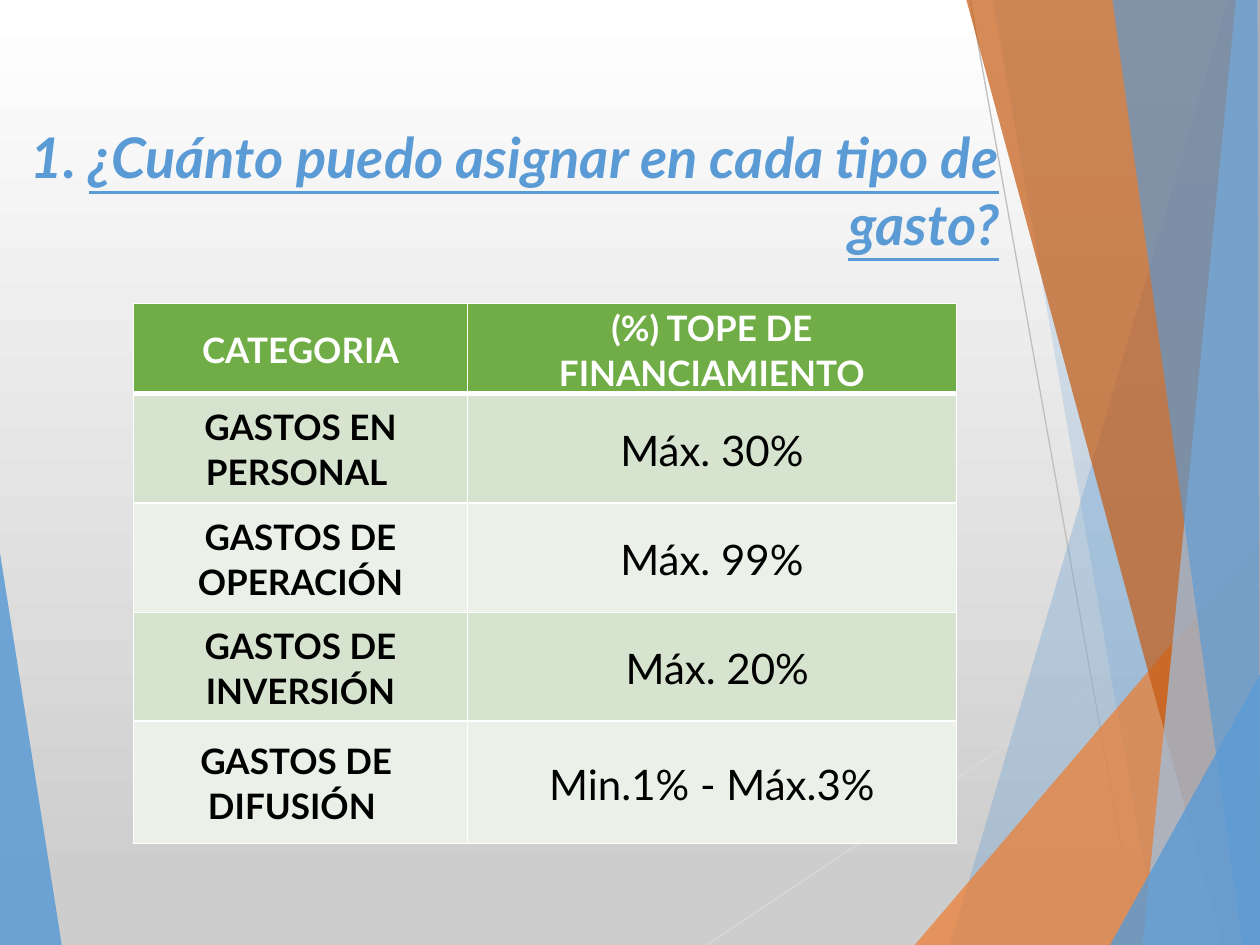
from lxml import etree
from pptx import Presentation
from pptx.dml.color import RGBColor
from pptx.enum.shapes import MSO_CONNECTOR
from pptx.enum.text import MSO_ANCHOR, PP_ALIGN
from pptx.oxml.ns import qn
from pptx.util import Inches, Pt

LINE = MSO_CONNECTOR.STRAIGHT
MID, TOP = MSO_ANCHOR.MIDDLE, MSO_ANCHOR.TOP
CENTER, RIGHT = PP_ALIGN.CENTER, PP_ALIGN.RIGHT
WHITE = RGBColor(0xFF, 0xFF, 0xFF)
BLACK = RGBColor(0, 0, 0)
GRAY = RGBColor(0xCD, 0xCD, 0xCD)
PALE = RGBColor(0xD9, 0xD9, 0xD9)
SILVER = RGBColor(0xBF, 0xBF, 0xBF)
BLUE = RGBColor(0x5B, 0x9B, 0xD5)
SKY = RGBColor(0x9D, 0xC3, 0xE6)
ORANGE = RGBColor(0xED, 0x7D, 0x31)
RUST = RGBColor(0xC5, 0x5A, 0x11)
GREEN = RGBColor(0x70, 0xAD, 0x47)
MINT = RGBColor(0xD5, 0xE3, 0xCF)
MIST = RGBColor(0xEB, 0xF1, 0xE9)

COLS, ROWS = 100, 75
deck = Presentation()
deck.slide_width, deck.slide_height = Inches(10), Inches(7.5)
UNIT = deck.slide_width // COLS
slide = deck.slides.add_slide(deck.slide_layouts[6])
shapes = slide.shapes


def grid(*vals):
    return [round(val * UNIT) for val in vals]


def write(para, text, size=20, color=BLACK, bold=True, italic=False,
          under=False, align=CENTER, space=None):
    para.alignment = align
    para.line_spacing = space
    run = para.add_run()
    run.text = text
    font = run.font
    font.name, font.size = "Lato", Pt(size)
    font.bold, font.italic, font.underline = bold, italic, under
    font.color.rgb = color


back = slide.background.fill
back.gradient()
back.gradient_angle = 270
for stop, color, place in zip(back.gradient_stops, (WHITE, GRAY), (0, 0.94)):
    stop.color.rgb = color
    stop.position = place

wedge = (BLUE, 85, [(0, 43.9), (4.9, ROWS), (0, ROWS)])
bands = [
    (BLUE, 30, [(97.5, 0), (75.4, ROWS), (COLS, ROWS), (COLS, 0)]),
    (BLUE, 20, [(78.8, 0), (91.9, ROWS), (COLS, ROWS), (COLS, 0)]),
    (ORANGE, 72, [(72.6, ROWS), (COLS, 42.9), (COLS, ROWS)]),
    (RUST, 70, [(76.7, 0), (97, ROWS), (COLS, ROWS), (COLS, 0)]),
    (SKY, 70, [(98.1, 0), (90.7, ROWS), (COLS, ROWS), (COLS, 0)]),
    (BLUE, 65, [(88.3, 0), (98.6, ROWS), (COLS, ROWS), (99.8, 0)]),
    (BLUE, 80, [(88.1, ROWS), (COLS, 53.5), (COLS, ROWS)]),
]
rays = [(PALE, 56.1, ROWS, COLS, 45.7), (SILVER, 77, 0, 90.4, ROWS)]

for color, *ends in rays:
    ray = shapes.add_connector(LINE, *grid(*ends))
    ray.line.color.rgb = color
    ray.line.width = Pt(0.75)
    etree.SubElement(ray._element.spPr, qn("a:effectLst"))

for color, alpha, spots in [wedge] + bands:
    pen = shapes.build_freeform(*grid(*spots[0]))
    pen.add_line_segments([grid(*spot) for spot in spots[1:]])
    band = pen.convert_to_shape()
    band.shadow.inherit = False
    band.line.fill.background()
    band.fill.solid()
    band.fill.fore_color.rgb = color
    tint = band.fill._xPr.find(qn("a:solidFill"))[0]
    etree.SubElement(tint, qn("a:alpha"), val=str(alpha * 1000))

title = shapes.add_textbox(*grid(0, 9.2, 80.3, 13.4)).text_frame
title.word_wrap = True
title.vertical_anchor = TOP
head = title.paragraphs[0]
head.space_after = Pt(2)
for text, under in [("1. ", False),
                    ("¿Cuánto puedo asignar en cada tipo de gasto?", True)]:
    write(head, text, size=32, color=BLUE, italic=True, under=under,
          align=RIGHT)

data = [
    ("CATEGORIA", "(%) TOPE DE FINANCIAMIENTO"),
    ("GASTOS EN PERSONAL ", "Máx. 30%"),
    ("GASTOS DE OPERACIÓN", "Máx. 99%"),
    ("GASTOS DE INVERSIÓN", " Máx. 20%"),
    ("GASTOS DE \nDIFUSIÓN  ", "Min.1% - Máx.3%"),
]
wide = grid(26.5, 38.8)
tall = grid(7.1, 8.7, 8.7, 8.6, 9.7)
table = shapes.add_table(len(tall), len(wide), *grid(10.6, 24.1),
                         sum(wide), sum(tall)).table
for col, size in zip(table.columns, wide):
    col.width = size
for row, size in zip(table.rows, tall):
    row.height = size

for r, line in enumerate(data):
    for c, text in enumerate(line):
        cell = table.cell(r, c)
        cell.vertical_anchor = MID
        cell.margin_left = cell.margin_right = grid(0.2)[0]
        cell.margin_top = cell.margin_bottom = 0
        cell.fill.solid()
        cell.fill.fore_color.rgb = (MINT if r % 2 else MIST) if r else GREEN
        props = cell._tc.get_or_add_tcPr()
        for i, side in enumerate("LRTB"):
            thick = 3 if (r, side) in [(0, "B"), (1, "T")] else 1
            edge = etree.Element(qn("a:ln" + side), w=str(Pt(thick)))
            fill = etree.SubElement(edge, qn("a:solidFill"))
            etree.SubElement(fill, qn("a:srgbClr"), val=str(WHITE))
            props.insert(i, edge)
        frame = cell.text_frame
        for i, part in enumerate(text.split("\n")):
            para = frame.add_paragraph() if i else frame.paragraphs[0]
            write(para, part, size=24 if r and c else 20,
                  color=BLACK if r else WHITE, bold=not (r and c), space=1.07)

deck.save("out.pptx")
